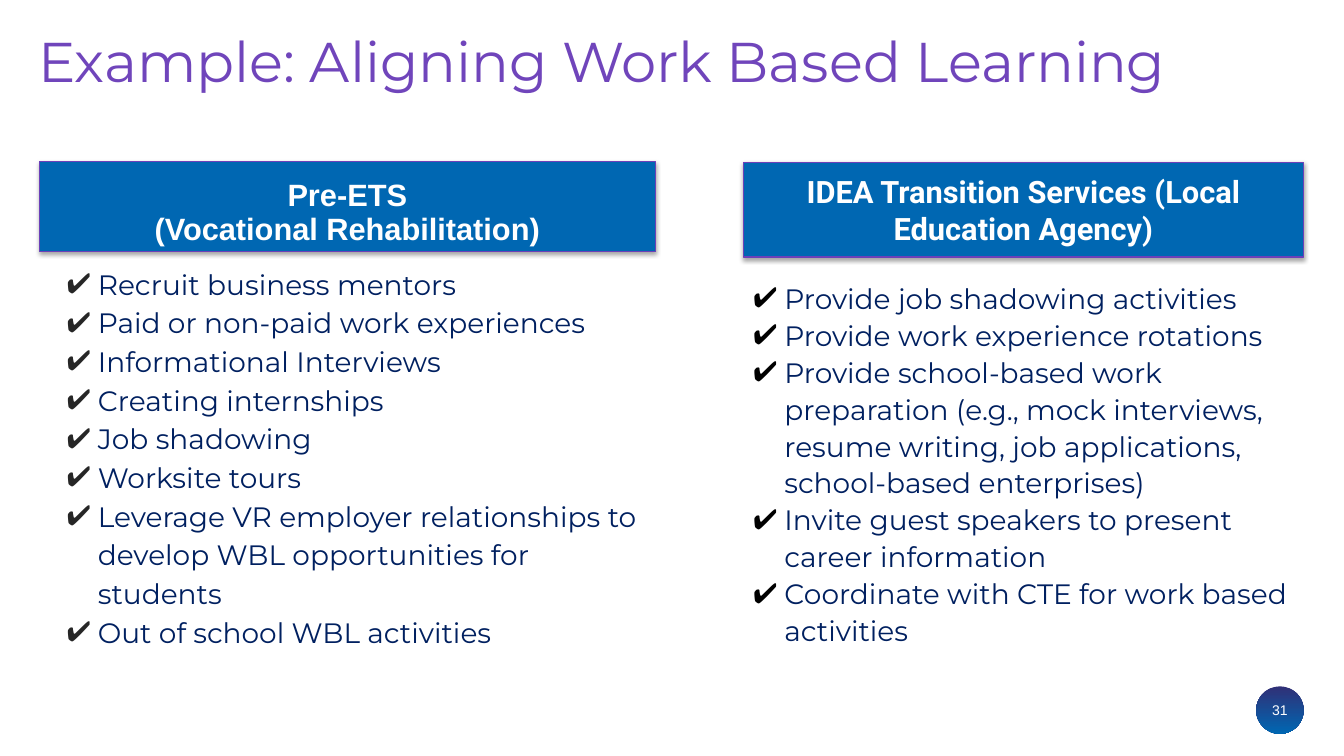
from dataclasses import dataclass

import pptx
import pptx.dml.color
import pptx.enum.shapes
import pptx.enum.text
import pptx.oxml
import pptx.oxml.ns
import pptx.util
from pptx.dml.color import RGBColor
from pptx.enum.text import MSO_ANCHOR, PP_ALIGN
from pptx.util import Inches, Pt

PURPLE = RGBColor(0x70, 0x45, 0xBB)
BORDER = RGBColor(0x6C, 0x40, 0xB8)
BLUE = RGBColor(0x00, 0x67, 0xB2)
INDIGO = RGBColor(0x30, 0x30, 0x77)
NAVY = RGBColor(0x00, 0x20, 0x60)
CHARCOAL = RGBColor(0x26, 0x26, 0x26)
BLACK = RGBColor(0, 0, 0)
WHITE = RGBColor(0xFF, 0xFF, 0xFF)

TITLE_FONT = {"name": "Montserrat", "size": Pt(40), "bold": False}
LIST_FONT = {"name": "Montserrat", "size": Pt(20), "bold": False}
NUMBER_FONT = {"name": "Arial", "size": Pt(10), "bold": False}
HEADING_FONT = {"size": Pt(22), "bold": True}

Box = tuple[float, float, float, float]


@dataclass
class Column:
    heading_idx: int
    heading: list[str]
    heading_font: str
    heading_box: Box
    heading_anchor: MSO_ANCHOR
    heading_inset: float
    heading_spacing: float
    items_idx: int
    items: list[str]
    items_box: Box
    indent: float
    check_color: RGBColor
    line_spacing: float


COLUMNS = [
    Column(
        1, ["Pre-ETS", "(Vocational Rehabilitation)"], "Arial",
        (0.39, 1.6, 6.11, 0.9), MSO_ANCHOR.BOTTOM, 0.05, 0.9,
        2,
        [
            "Recruit business mentors",
            "Paid or non-paid work experiences",
            "Informational Interviews",
            "Creating internships",
            "Job shadowing",
            "Worksite tours",
            "Leverage VR employer relationships to develop WBL opportunities for students",
            "Out of school WBL activities",
        ],
        (0.39, 2.55, 6.11, 4.03), 0.48, CHARCOAL, 1.15,
    ),
    Column(
        3, ["IDEA Transition Services (Local Education Agency)"], "Roboto",
        (7.37, 1.61, 5.56, 0.94), MSO_ANCHOR.TOP, 0.1, 1.0,
        4,
        [
            "Provide job shadowing activities",
            "Provide work experience rotations",
            "Provide school-based work preparation (e.g., mock interviews, "
            "resume writing, job applications, school-based enterprises)",
            "Invite guest speakers to present career information",
            "Coordinate with CTE for work based activities",
        ],
        (7.37, 2.69, 5.56, 4.17), 0.31, BLACK, 1.1,
    ),
]


def apply(target: object, values: dict) -> None:
    for name, value in values.items():
        setattr(target, name, value)


def place(shape, box: Box) -> None:
    lengths = map(Inches, box)
    apply(shape, dict(zip(("left", "top", "width", "height"), lengths)))


def write(shape, lines: list[str], font: dict, color: RGBColor, align: PP_ALIGN,
          spacing: float, anchor: MSO_ANCHOR, inset: float = 0.05) -> None:
    """Fill a shape with one paragraph per line."""
    frame = shape.text_frame
    apply(frame, {
        "text": "\n".join(lines),
        "word_wrap": True,
        "auto_size": pptx.enum.text.MSO_AUTO_SIZE.NONE,
        "vertical_anchor": anchor,
        "margin_left": Inches(0.1), "margin_right": Inches(0.1),
        "margin_top": Inches(inset), "margin_bottom": Inches(inset),
    })
    for paragraph in frame.paragraphs:
        apply(paragraph, {"alignment": align, "line_spacing": spacing,
                          "space_before": Pt(0), "space_after": Pt(0)})
        for run in paragraph.runs:
            apply(run.font, font)
            run.font.color.rgb = color


def add_check(paragraph, indent: float, color: RGBColor) -> None:
    properties = paragraph._p.get_or_add_pPr()
    properties.set("marL", str(Inches(indent)))
    properties.set("indent", str(-Inches(0.31)))
    namespace = pptx.oxml.ns.nsdecls("a")
    for bullet_part in (
        f'<a:buClr {namespace}><a:srgbClr val="{color}"/></a:buClr>',
        f'<a:buFont {namespace} typeface="Arial"/>',
        f'<a:buChar {namespace} char="✔"/>',
    ):
        properties.append(pptx.oxml.parse_xml(bullet_part))


def add_shadow(shape) -> None:
    shape.shadow.inherit = False
    effects = shape._element.spPr.find(pptx.oxml.ns.qn("a:effectLst"))
    effects.append(pptx.oxml.parse_xml(
        f'<a:outerShdw {pptx.oxml.ns.nsdecls("a")} blurRad="{Pt(3.1)}" '
        f'dist="{Pt(1.6)}" dir="5400000" rotWithShape="0">'
        '<a:srgbClr val="000000"><a:alpha val="35000"/></a:srgbClr></a:outerShdw>'
    ))


def draw_column(slide, column: Column) -> None:
    parts = {p.placeholder_format.idx: p for p in slide.placeholders}

    heading = parts[column.heading_idx]
    place(heading, column.heading_box)
    heading.fill.solid()
    heading.fill.fore_color.rgb = BLUE
    heading.line.color.rgb = BORDER
    heading.line.width = Pt(0.75)
    add_shadow(heading)
    write(heading, column.heading, HEADING_FONT | {"name": column.heading_font},
          WHITE, PP_ALIGN.CENTER, column.heading_spacing,
          column.heading_anchor, column.heading_inset)

    checklist = parts[column.items_idx]
    place(checklist, column.items_box)
    write(checklist, column.items, LIST_FONT, NAVY, PP_ALIGN.LEFT,
          column.line_spacing, MSO_ANCHOR.TOP)
    for paragraph in checklist.text_frame.paragraphs:
        add_check(paragraph, column.indent, column.check_color)
    checklist.text_frame.paragraphs[0].line_spacing = 1.15


def draw_page_number(slide) -> None:
    badge = slide.shapes.add_shape(
        pptx.enum.shapes.MSO_SHAPE.OVAL, *map(Inches, (12.46, 6.81, 0.47, 0.47)))
    badge.shadow.inherit = False
    badge.line.fill.background()
    badge.fill.gradient()
    badge.fill.gradient_angle = 270
    for stop, color in zip(badge.fill.gradient_stops, (INDIGO, BLUE)):
        stop.color.rgb = color
    number = slide.shapes.add_textbox(*map(Inches, (12.35, 6.91, 0.69, 0.44)))
    write(number, ["31"], NUMBER_FONT, WHITE, PP_ALIGN.CENTER, 1.0, MSO_ANCHOR.TOP)


def main() -> None:
    deck = pptx.Presentation()
    deck.slide_width, deck.slide_height = Inches(13.33), Inches(7.5)
    slide = deck.slides.add_slide(deck.slide_layouts.get_by_name("Comparison"))

    # Title
    title = slide.shapes.title
    place(title, (0.28, 0.19, 12.65, 0.9))
    write(title, ["Example: Aligning Work Based Learning"], TITLE_FONT, PURPLE,
          PP_ALIGN.LEFT, 0.9, MSO_ANCHOR.MIDDLE)

    # Two service columns
    for column in COLUMNS:
        draw_column(slide, column)

    # Page number
    draw_page_number(slide)
    deck.save("out.pptx")


if __name__ == "__main__":
    main()
